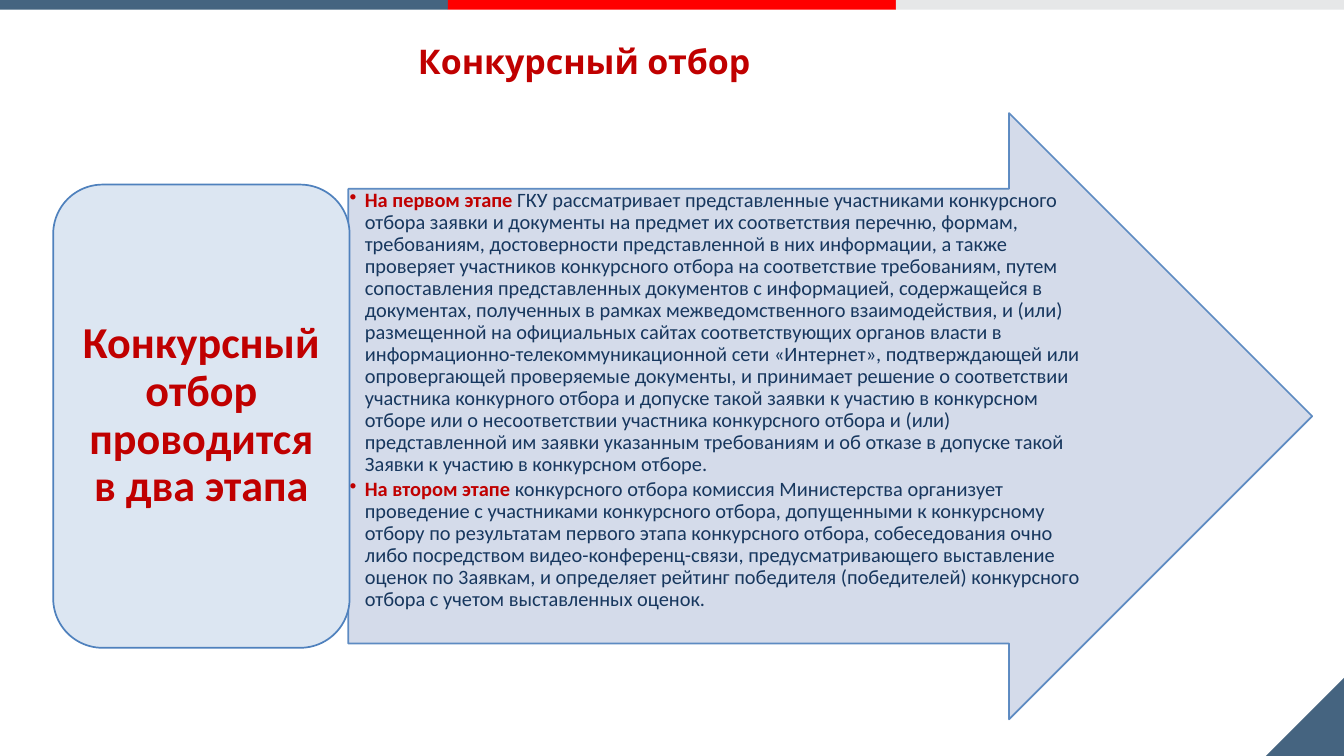
"""Builds the slide on the two stages of the competitive selection."""
import pptx
import pptx.util
import pptx.dml.color
import pptx.enum.shapes
import pptx.enum.text
import pptx.oxml
import pptx.oxml.ns

Inches, Pt = pptx.util.Inches, pptx.util.Pt
MSO = pptx.enum.shapes.MSO_SHAPE
RED, NAVY, SLATE, BLUE = "C00000", "17375E", "456480", "4F81BD"
WIDTH, HEIGHT = 21.99, 12.37


def rgb(color):
    return pptx.dml.color.RGBColor.from_string(color)


def paint(sp, fill, line=None):
    sp.shadow.inherit = False
    sp.fill.solid()
    sp.fill.fore_color.rgb = rgb(fill)
    if line:
        sp.line.color.rgb = rgb(line)
        sp.line.width = Pt(2)
    else:
        sp.line.fill.background()


prs = pptx.Presentation()
prs.slide_width, prs.slide_height = Inches(WIDTH), Inches(HEIGHT)
s = prs.slides.add_slide(prs.slide_layouts[6])

corner = 1.28
fb = s.shapes.build_freeform(Inches(WIDTH), Inches(HEIGHT - corner))
fb.add_line_segments([(Inches(WIDTH - corner), Inches(HEIGHT)),
                      (Inches(WIDTH), Inches(HEIGHT))])
paint(fb.convert_to_shape(), SLATE)

arrow = s.shapes.add_shape(MSO.RIGHT_ARROW, Inches(5.7), Inches(1.85), Inches(15.77), Inches(9.92))
arrow.adjustments[0], arrow.adjustments[1] = 0.75, 0.5
paint(arrow, "D0D8E8", BLUE)
ns = pptx.oxml.ns.nsdecls("a")
for clr in arrow._element.spPr.iter(pptx.oxml.ns.qn("a:srgbClr")):
    clr.append(pptx.oxml.parse_xml(f'<a:alpha {ns} val="90000"/>'))

stages = [
    ("На первом этапе ", [
        "ГКУ рассматривает представленные участниками конкурсного отбора заявки и документы на предмет",
        "их соответствия перечню, формам, требованиям, достоверности представленной в них информации,",
        "а также проверяет участников конкурсного отбора на соответствие требованиям, путем",
        "сопоставления представленных документов с информацией, содержащейся в документах, полученных",
        "в рамках межведомственного взаимодействия, и (или) размещенной на официальных сайтах",
        "соответствующих органов власти в информационно-телекоммуникационной сети «Интернет»,",
        "подтверждающей или опровергающей проверяемые документы, и принимает решение о соответствии",
        "участника конкурного отбора и допуске такой заявки к участию в конкурсном отборе или",
        "о несоответствии участника конкурсного отбора и (или) представленной им заявки указанным",
        "требованиям и об отказе в допуске такой Заявки к участию в конкурсном отборе.",
    ]),
    ("На втором этапе ", [
        "конкурсного отбора комиссия Министерства организует проведение с участниками конкурсного",
        "отбора, допущенными к конкурсному отбору по результатам первого этапа конкурсного отбора,",
        "собеседования очно либо посредством видео-конференц-связи, предусматривающего выставление",
        "оценок по 3аявкам, и определяет рейтинг победителя (победителей) конкурсного отбора с учетом",
        "выставленных оценок.",
    ]),
]
tf = s.shapes.add_textbox(Inches(5.7), Inches(3.09), Inches(12.05), Inches(7.44)).text_frame
tf.word_wrap = True
tf.margin_left = tf.margin_right = tf.margin_top = tf.margin_bottom = Inches(0.02)
for i, (lead, body) in enumerate(stages):
    p = tf.add_paragraph() if i else tf.paragraphs[0]
    p.font.size, p.font.name = Pt(24), "Calibri"
    p.line_spacing, p.space_after = 0.9, Pt(3.6)
    pPr = p._p.get_or_add_pPr()
    pPr.set("marL", str(Inches(0.25)))
    pPr.set("indent", str(-Inches(0.25)))
    pPr.insert_element_before(pptx.oxml.parse_xml(f'<a:buChar {ns} char="•"/>'),
                              "a:tabLst", "a:defRPr", "a:extLst")
    for text, color, bold in [(lead, RED, True), (" ".join(body), NAVY, False)]:
        r = p.add_run()
        r.text = text
        r.font.color.rgb = rgb(color)
        r.font.bold = bold

card = s.shapes.add_shape(MSO.ROUNDED_RECTANGLE, Inches(0.87), Inches(3.02), Inches(4.85), Inches(7.58))
paint(card, "DCE6F2", BLUE)
tf = card.text_frame
tf.word_wrap = True
tf.vertical_anchor = pptx.enum.text.MSO_ANCHOR.MIDDLE
tf.margin_left = tf.margin_right = Inches(0.22)
tf.margin_top = tf.margin_bottom = Inches(0.11)
p = tf.paragraphs[0]
p.text = "Конкурсный отбор проводится в два этапа"
p.alignment = pptx.enum.text.PP_ALIGN.CENTER
p.line_spacing = 0.9
p.font.size, p.font.name, p.font.bold = Pt(52), "Calibri", True
p.font.color.rgb = rgb(RED)

bar = WIDTH / 3
for i, color in enumerate([SLATE, "FF0000", "E6E7E8"]):
    sp = s.shapes.add_shape(MSO.RECTANGLE, Inches(i * bar), 0, Inches(bar), Inches(0.16))
    paint(sp, color)

tf = s.shapes.add_textbox(Inches(6.74), Inches(0.62), Inches(5.68), Inches(0.77)).text_frame
tf.word_wrap = False
tf.auto_size = pptx.enum.text.MSO_AUTO_SIZE.SHAPE_TO_FIT_TEXT
p = tf.paragraphs[0]
p.text = "Конкурсный отбор"
p.font.size, p.font.name, p.font.bold = Pt(40), "Karla", True
p.font.color.rgb = rgb(RED)

prs.save("out.pptx")
